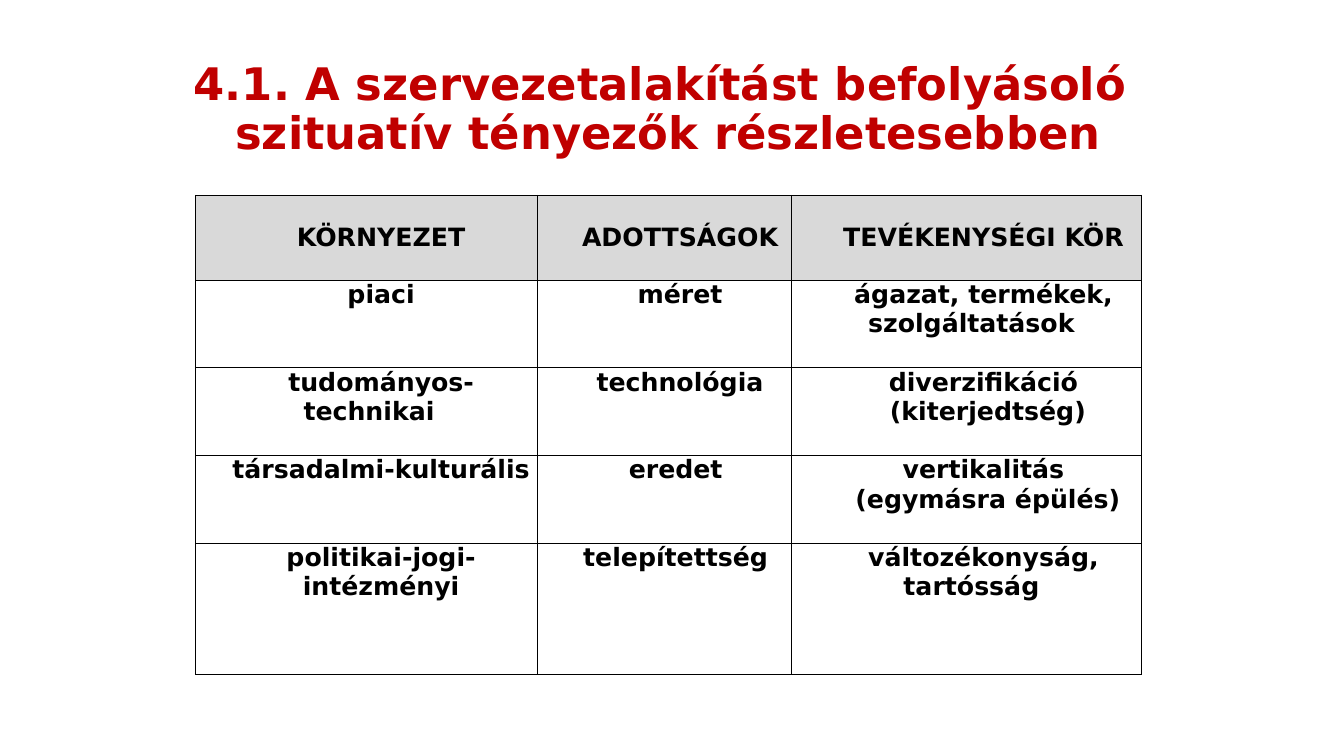
from lxml.etree import SubElement
from pptx import Presentation
from pptx.dml.color import RGBColor
from pptx.enum.text import MSO_ANCHOR, PP_ALIGN
from pptx.oxml.ns import qn
from pptx.util import Inches, Pt

# Content
TITLE = "4.1. A szervezetalakítást befolyásoló \vszituatív tényezők részletesebben"
ROWS = [
    ("KÖRNYEZET", "ADOTTSÁGOK", "TEVÉKENYSÉGI KÖR"),
    ("piaci", "méret", "ágazat, termékek, szolgáltatások"),
    ("tudományos-technikai", "technológia", "diverzifikáció\n (kiterjedtség)"),
    ("társadalmi-kulturális", "eredet ", "vertikalitás\n (egymásra épülés)"),
    ("politikai-jogi-\nintézményi", "telepítettség ", "változékonyság, tartósság"),
]

# Format
RED = RGBColor(0xC0, 0x00, 0x00)
BLACK = RGBColor(0x00, 0x00, 0x00)
GREY = RGBColor(0xD9, 0xD9, 0xD9)
TITLE_FONT = {"name": "DejaVu Sans", "size": Pt(32), "bold": True}
CELL_FONT = {"name": "DejaVu Sans", "size": Pt(18), "bold": True}
CELL_FORMAT = {"margin_left": Inches(0.07), "margin_right": Inches(0.07),
               "margin_top": 0, "margin_bottom": 0}

# Grid, in inches
PAGE_SIZE = (13.33, 7.5)
TITLE_PLACE = (1.63, 0.43, 10, 1.33)
TABLE_LEFT, TABLE_TOP = 1.94, 1.94
COLUMN_WIDTHS = (3.39, 2.52, 3.47)
ROW_HEIGHTS = (0.84, 0.87, 0.87, 0.87, 1.3)
COLUMN_MARGINS = (0.05, 0.07, 0.1)
FIRST_LINE_INDENT = 0.24


def set_values(target, values):
    for name, value in values.items():
        setattr(target, name, value)


def style_paragraph(para, font, color):
    para.alignment = PP_ALIGN.CENTER
    for span in para.runs:
        set_values(span.font, font)
        span.font.color.rgb = color


def add_borders(cell):
    properties = cell._tc.get_or_add_tcPr()
    for position, edge in enumerate(("a:lnL", "a:lnR", "a:lnT", "a:lnB")):
        line = SubElement(properties, qn(edge), w=str(Pt(1)))
        fill = SubElement(line, qn("a:solidFill"))
        SubElement(fill, qn("a:srgbClr"), val=str(BLACK))
        properties.insert(position, line)


def add_title(page):
    box = page.shapes.add_textbox(*map(Inches, TITLE_PLACE))
    frame = box.text_frame
    frame.word_wrap = True
    frame.vertical_anchor = MSO_ANCHOR.MIDDLE
    frame.text = TITLE
    para = frame.paragraphs[0]
    para.line_spacing = 0.9
    style_paragraph(para, TITLE_FONT, RED)


def fill_cell(cell, text, margin, is_header):
    set_values(cell, CELL_FORMAT)
    cell.vertical_anchor = MSO_ANCHOR.MIDDLE if is_header else MSO_ANCHOR.TOP
    if is_header:
        cell.fill.solid()
        cell.fill.fore_color.rgb = GREY
    else:
        cell.fill.background()
    add_borders(cell)
    cell.text_frame.text = text
    for para in cell.text_frame.paragraphs:
        properties = para._p.get_or_add_pPr()
        properties.set("marL", str(Inches(margin)))
        properties.set("indent", str(Inches(FIRST_LINE_INDENT)))
        style_paragraph(para, CELL_FONT, BLACK)


def add_factor_table(page):
    table = page.shapes.add_table(
        len(ROWS), len(COLUMN_WIDTHS), Inches(TABLE_LEFT), Inches(TABLE_TOP),
        Inches(sum(COLUMN_WIDTHS)), Inches(sum(ROW_HEIGHTS))).table
    set_values(table, {"first_row": False, "horz_banding": False})
    for column, width in zip(table.columns, COLUMN_WIDTHS):
        column.width = Inches(width)
    for row, height in zip(table.rows, ROW_HEIGHTS):
        row.height = Inches(height)
    for row_index, texts in enumerate(ROWS):
        for column_index, text in enumerate(texts):
            fill_cell(table.cell(row_index, column_index), text,
                      COLUMN_MARGINS[column_index], row_index == 0)


def main():
    deck = Presentation()
    deck.slide_width, deck.slide_height = map(Inches, PAGE_SIZE)
    page = deck.slides.add_slide(deck.slide_layouts[6])
    add_title(page)
    add_factor_table(page)
    deck.save("out.pptx")


if __name__ == "__main__":
    main()
